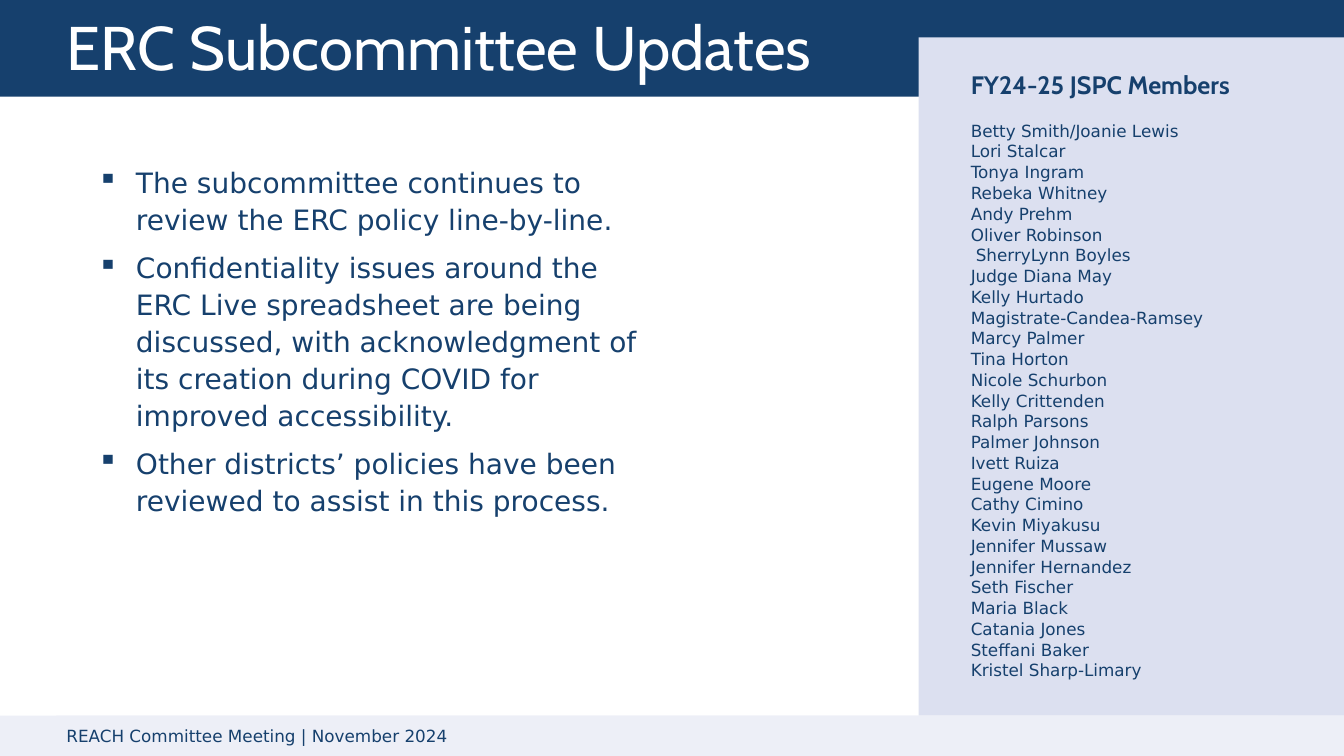
from lxml.etree import SubElement
from pptx import Presentation
from pptx.dml.color import RGBColor as Rgb
from pptx.enum.shapes import MSO_SHAPE as Shape
from pptx.enum.text import MSO_ANCHOR as Anchor, PP_ALIGN as Align
from pptx.oxml.ns import qn
from pptx.util import Inches, Pt

COLORS = {"navy": "16406D", "white": "FFFFFF", "panel": "DCE0F0", "foot": "EDEFF7"}
HEAD, BODY = "Cabin", "DejaVu Sans"
WIDE, HIGH = 13.33, 7.5

POINTS = [
    "The subcommittee continues to review the ERC policy line-by-line.",
    "Confidentiality issues around the ERC Live spreadsheet are being discussed, "
    "with acknowledgment of its creation during COVID for improved accessibility.",
    "Other districts’ policies have been reviewed to assist in this process.",
]
MEMBERS = [
    "Betty Smith/Joanie Lewis", "Lori Stalcar", "Tonya Ingram", "Rebeka Whitney",
    "Andy Prehm", "Oliver Robinson", "SherryLynn Boyles", "Judge Diana May",
    "Kelly Hurtado", "Magistrate-Candea-Ramsey", "Marcy Palmer", "Tina Horton",
    "Nicole Schurbon", "Kelly Crittenden", "Ralph Parsons", "Palmer Johnson",
    "Ivett Ruiza", "Eugene Moore", "Cathy Cimino", "Kevin Miyakusu",
    "Jennifer Mussaw", "Jennifer Hernandez", "Seth Fischer", "Maria Black",
    "Catania Jones", "Steffani Baker", "Kristel Sharp-Limary",
]
INDENTED = "SherryLynn Boyles"


class Deck:
    def __init__(self):
        self.prs = Presentation()
        self.prs.slide_width = Inches(WIDE)
        self.prs.slide_height = Inches(HIGH)
        self.slide = self.prs.slides.add_slide(self.prs.slide_layouts[6])

    def rect(self, box, color):
        shape = self.slide.shapes.add_shape(Shape.RECTANGLE, *map(Inches, box))
        shape.shadow.inherit = False
        shape.fill.solid()
        shape.fill.fore_color.rgb = Rgb.from_string(COLORS[color])
        shape.line.fill.background()
        return shape

    def text(self, box):
        frame = self.slide.shapes.add_textbox(*map(Inches, box)).text_frame
        frame.word_wrap = True
        return frame

    def para(self, frame, words, size, font=BODY, color="navy", bold=False,
             line=1.0, after=0, indent=0):
        first = not frame.paragraphs[0].runs
        para = frame.paragraphs[0] if first else frame.add_paragraph()
        para.alignment = Align.LEFT
        para.line_spacing = line
        para.space_after = Pt(after)
        if indent:
            para._p.get_or_add_pPr().set("marL", str(Inches(indent)))
        run = para.add_run()
        run.text = words
        run.font.size = Pt(size)
        run.font.name = font
        run.font.bold = bold
        run.font.color.rgb = Rgb.from_string(COLORS[color])
        return para

    def bullet(self, frame, words, size, indent):
        para = self.para(frame, words, size, line=1.1, after=8, indent=indent)
        props = para._p.get_or_add_pPr()
        props.set("indent", str(-Inches(indent)))
        SubElement(props, qn("a:buChar")).set("char", "▪")


def main():
    deck = Deck()
    deck.rect((0, 0, WIDE, 0.96), "navy")
    title = deck.text((0.56, 0.12, 12.4, 0.72))
    deck.para(title, "ERC Subcommittee Updates", 44, HEAD, "white", line=0.9)

    body = deck.text((0.87, 1.56, 5.68, 3.53))
    for point in POINTS:
        deck.bullet(body, point, 20, 0.38)

    deck.rect((9.11, 0.37, 4.22, 6.73), "panel")
    roster = deck.text((9.53, 0.64, 3.39, 6.06))
    deck.para(roster, "FY24-25 JSPC Members", 18, HEAD, bold=True, after=14.4)
    for name in MEMBERS:
        deck.para(roster, name, 12, line=1.03, indent=0.05 if name == INDENTED else 0)

    deck.rect((0, 7.1, WIDE, 0.4), "foot")
    foot = deck.rect((0.56, 7.1, 12.12, 0.4), "foot").text_frame
    foot.vertical_anchor = Anchor.MIDDLE
    deck.para(foot, "REACH Committee Meeting | November 2024", 12)
    deck.prs.save("out.pptx")


if __name__ == "__main__":
    main()
